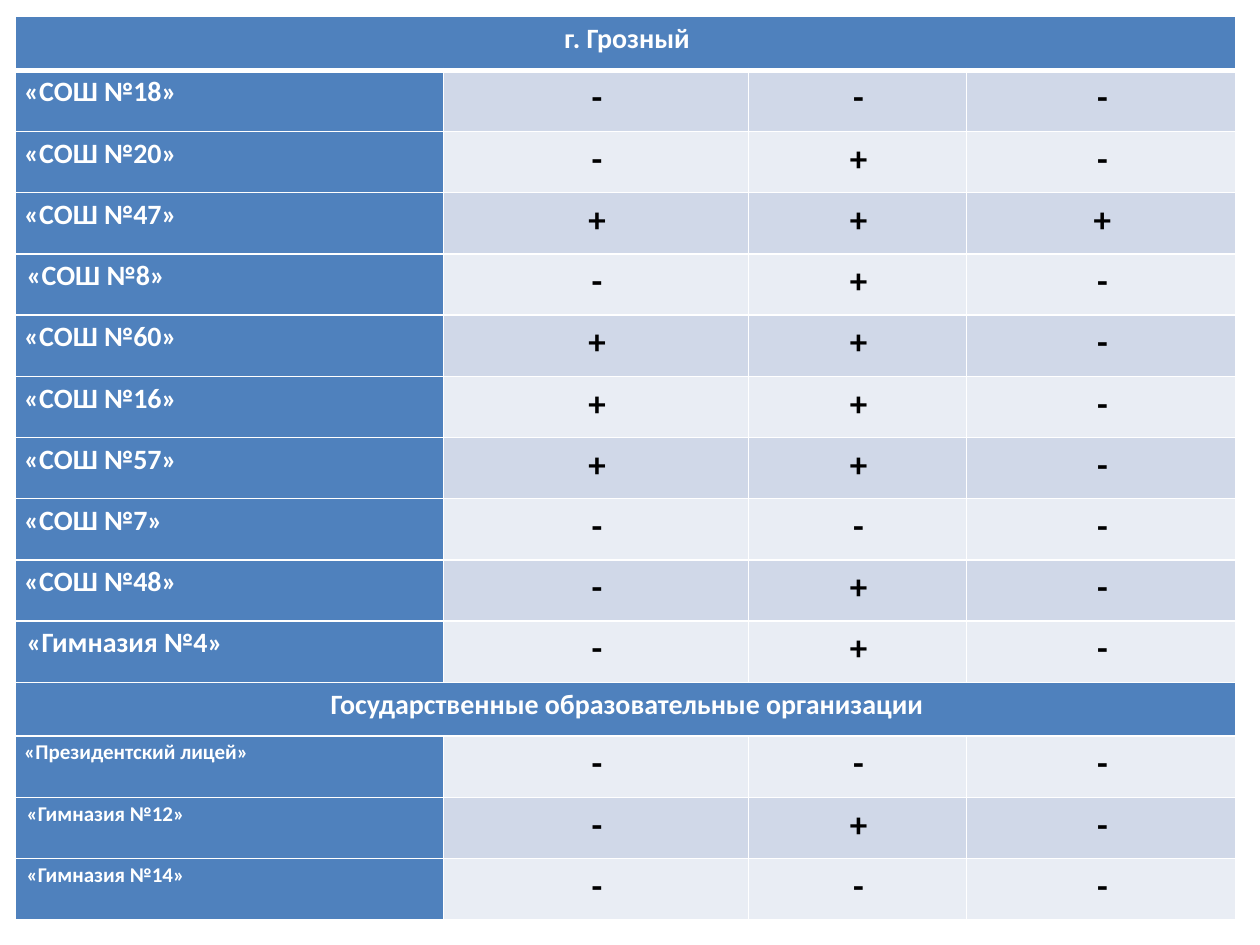
from dataclasses import dataclass

from lxml.etree import SubElement
from pptx import Presentation
from pptx.dml.color import RGBColor
from pptx.enum.text import MSO_ANCHOR, PP_ALIGN
from pptx.oxml.ns import qn
from pptx.table import Table, _Cell
from pptx.util import Length, Pt


@dataclass(frozen=True)
class Theme:
    font: str = "Calibri"
    heading: str = "4F81BD"
    heading_text: str = "FFFFFF"
    mark_text: str = "000000"
    border: str = "FFFFFF"
    bands: tuple[str, str] = ("E9EDF4", "D0D8E8")
    name_size: Length = Pt(16)
    small_name_size: Length = Pt(12)
    mark_size: Length = Pt(20)
    thin: Length = Pt(1)
    thick: Length = Pt(3)
    side_margin: Length = Pt(4.9)
    indent: Length = Pt(1.4)


@dataclass(frozen=True)
class School:
    name: str
    marks: str
    indented: bool = False


@dataclass(frozen=True)
class Section:
    title: str
    name_size: Length
    schools: tuple[School, ...]


THEME = Theme()
COLUMN_WIDTHS = (Pt(244.5), Pt(174.2), Pt(124.6), Pt(154.2))
TITLE_HEIGHT, SCHOOL_HEIGHT = Pt(30.7), Pt(35)

SECTIONS = (
    Section("г. Грозный", THEME.name_size, (
        School("«СОШ №18»", "---"),
        School("«СОШ №20»", "-+-"),
        School("«СОШ №47»", "+++"),
        School("«СОШ №8»", "-+-", indented=True),
        School("«СОШ №60»", "++-"),
        School("«СОШ №16»", "++-"),
        School("«СОШ №57»", "++-"),
        School("«СОШ №7»", "---"),
        School("«СОШ №48»", "-+-"),
        School("«Гимназия №4»", "-+-", indented=True),
    )),
    Section("Государственные образовательные организации", THEME.small_name_size, (
        School("«Президентский лицей»", "---"),
        School("«Гимназия №12»", "-+-", indented=True),
        School("«Гимназия №14»", "---", indented=True),
    )),
)


def set_borders(cell: _Cell, top: Length, bottom: Length) -> None:
    properties = cell._tc.get_or_add_tcPr()
    widths = {"lnL": THEME.thin, "lnR": THEME.thin, "lnT": top, "lnB": bottom}
    for side, width in widths.items():
        line = SubElement(properties, qn(f"a:{side}"), w=str(int(width)))
        line_fill = SubElement(line, qn("a:solidFill"))
        SubElement(line_fill, qn("a:srgbClr"), val=THEME.border)


def style_cell(cell: _Cell, row: int, fill: str) -> None:
    set_borders(cell,
                top=THEME.thick if row == 1 else THEME.thin,
                bottom=THEME.thick if row == 0 else THEME.thin)
    cell.fill.solid()
    cell.fill.fore_color.rgb = RGBColor.from_string(fill)
    cell.margin_left = cell.margin_right = THEME.side_margin
    cell.margin_top = cell.margin_bottom = Pt(0)
    cell.vertical_anchor = MSO_ANCHOR.TOP


def write(cell: _Cell, wording: str, size: Length, color: str,
          centred: bool = True, indented: bool = True) -> None:
    paragraph = cell.text_frame.paragraphs[0]
    paragraph.alignment = PP_ALIGN.CENTER if centred else PP_ALIGN.LEFT
    paragraph.line_spacing = 1.15
    if indented:
        paragraph._p.get_or_add_pPr().set("marL", str(int(THEME.indent)))
    run = paragraph.add_run()
    run.text = wording
    run.font.name = THEME.font
    run.font.size = size
    run.font.bold = True
    run.font.color.rgb = RGBColor.from_string(color)


def add_title_row(table: Table, row: int, section: Section) -> None:
    table.rows[row].height = TITLE_HEIGHT
    for cell in table.rows[row].cells:
        style_cell(cell, row, THEME.heading)
    title = table.cell(row, 0)
    title.merge(table.cell(row, len(COLUMN_WIDTHS) - 1))
    write(title, section.title, THEME.name_size, THEME.heading_text)


def add_school_row(table: Table, row: int, school: School, name_size: Length) -> None:
    table.rows[row].height = SCHOOL_HEIGHT
    name = table.cell(row, 0)
    style_cell(name, row, THEME.heading)
    write(name, school.name, name_size, THEME.heading_text,
          centred=False, indented=school.indented)
    for column, mark in enumerate(school.marks, start=1):
        mark_cell = table.cell(row, column)
        style_cell(mark_cell, row, THEME.bands[row % 2])
        write(mark_cell, mark, THEME.mark_size, THEME.mark_text)


def main() -> None:
    presentation = Presentation()
    presentation.slide_width, presentation.slide_height = Pt(720), Pt(540)
    slide = presentation.slides.add_slide(presentation.slide_layouts[6])

    # Table grid
    school_count = sum(len(section.schools) for section in SECTIONS)
    height = len(SECTIONS) * TITLE_HEIGHT + school_count * SCHOOL_HEIGHT
    schools_table = slide.shapes.add_table(
        len(SECTIONS) + school_count, len(COLUMN_WIDTHS),
        Pt(8.9), Pt(9.4), sum(COLUMN_WIDTHS), height).table
    schools_table.first_row = schools_table.horz_banding = False
    for column, width in zip(schools_table.columns, COLUMN_WIDTHS):
        column.width = width

    # Sections with their schools
    row = 0
    for section in SECTIONS:
        add_title_row(schools_table, row, section)
        for row, school in enumerate(section.schools, start=row + 1):
            add_school_row(schools_table, row, school, section.name_size)
        row += 1

    presentation.save("out.pptx")


if __name__ == "__main__":
    main()
